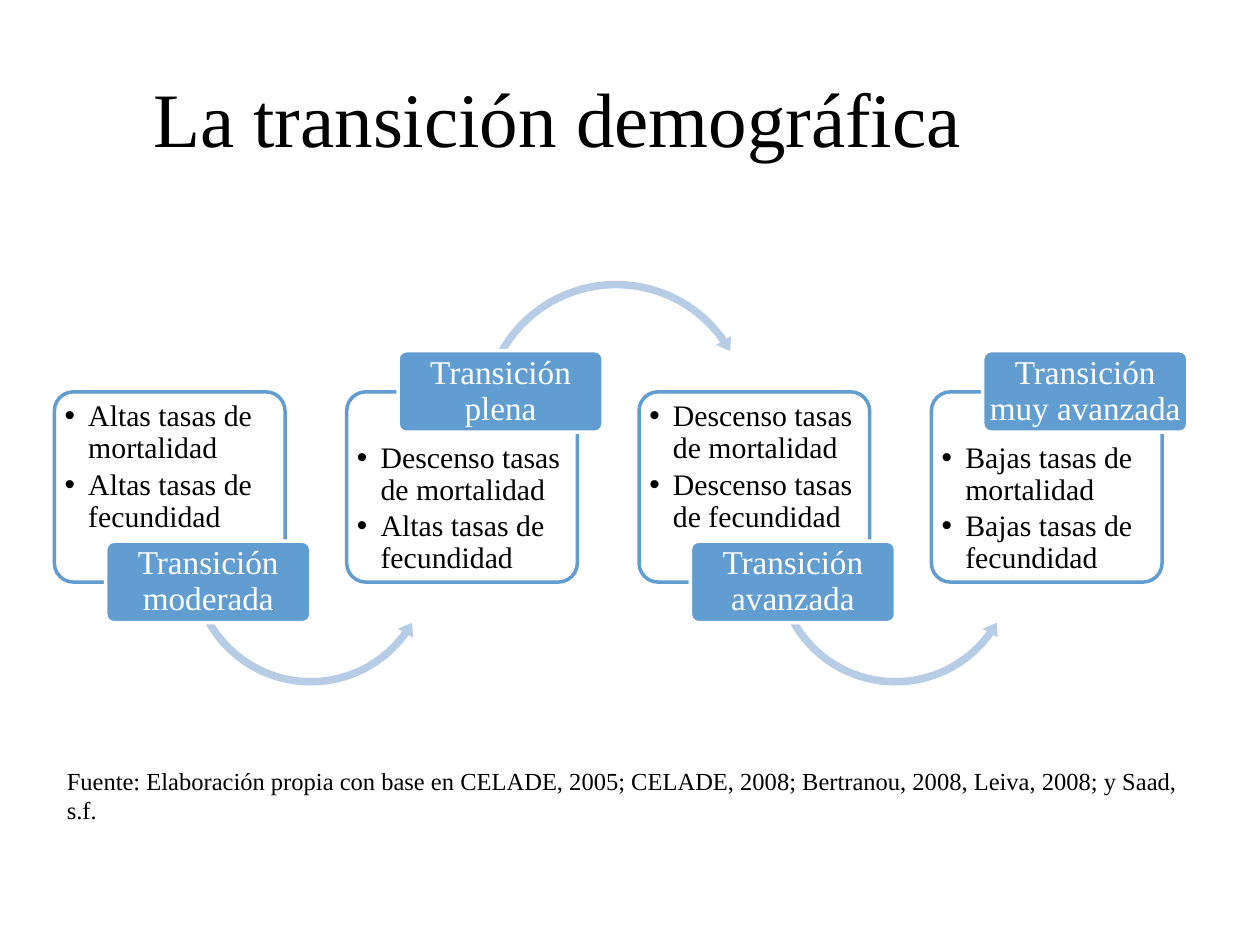
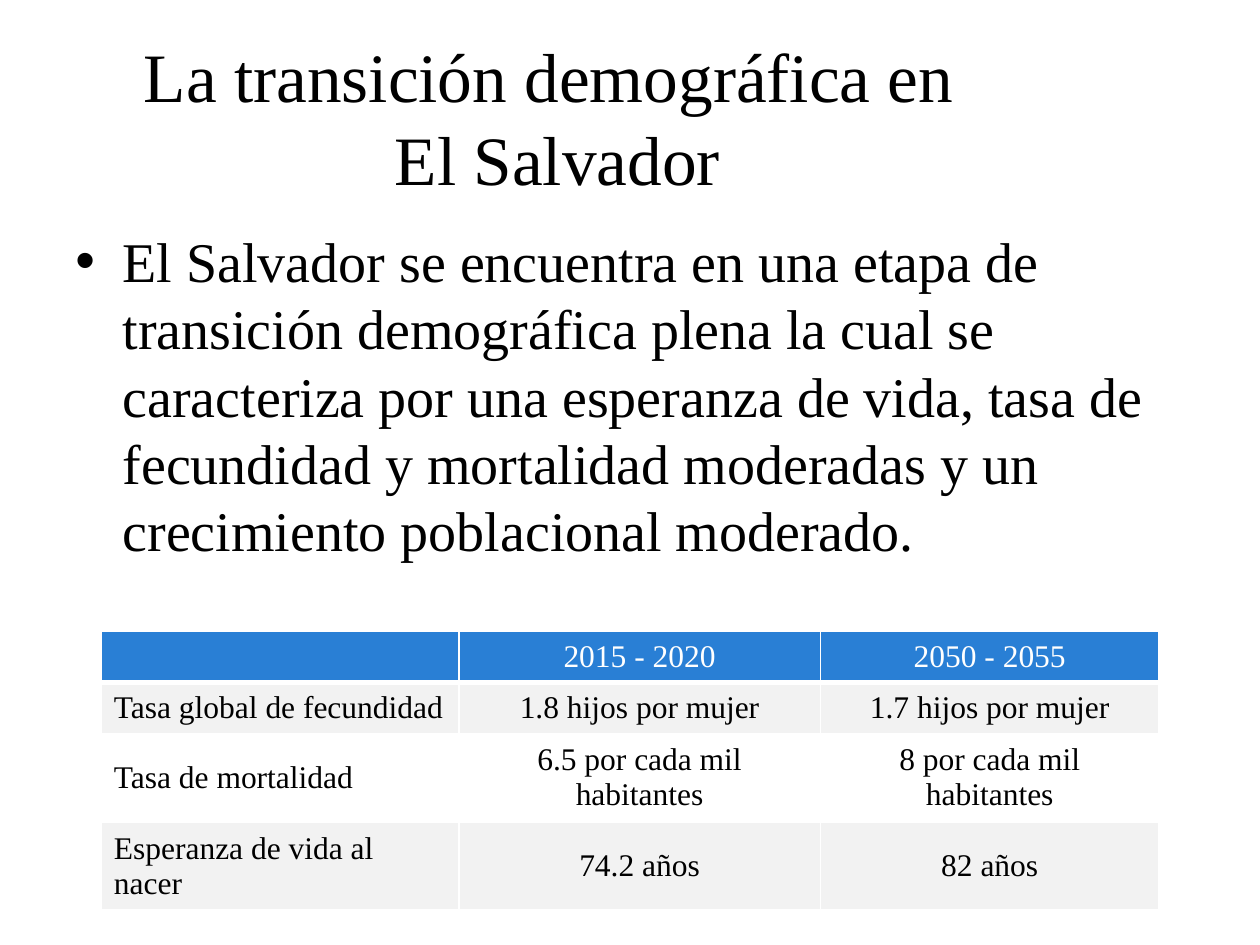
import pptx
import pptx.dml.color
import pptx.enum.shapes
import pptx.enum.text
import pptx.util
from lxml import etree
from pptx.oxml.ns import qn

Pt = pptx.util.Pt
SHAPE = pptx.enum.shapes.MSO_SHAPE
ALIGN = pptx.enum.text.PP_ALIGN
ANCHOR = pptx.enum.text.MSO_ANCHOR

FONT = "Times New Roman"
BLACK, WHITE = "000000", "FFFFFF"
BLUE, PALE_BLUE = "629DD1", "B7CCE5"
HEADER_BLUE, BAND_GREY = "297FD5", "F2F2F2"
TITLE_BOX = (36, 21.6, 565.2, 90)


def rgb(colour):
    return pptx.dml.color.RGBColor.from_string(colour)


def write(frame, texts, size, colour=BLACK, align=ALIGN.LEFT, indent=0,
          line_spacing=None, gap=0):
    """Fill a text frame, one paragraph per text; an indent also adds bullets."""
    frame.word_wrap = True
    for index, text in enumerate(texts):
        para = frame.paragraphs[0] if index == 0 else frame.add_paragraph()
        para.text = text
        if indent:
            properties = para._p.get_or_add_pPr()
            properties.set("marL", str(Pt(indent)))
            properties.set("indent", str(-Pt(indent)))
            etree.SubElement(properties, qn("a:buFont")).set("typeface", "Arial")
            etree.SubElement(properties, qn("a:buChar")).set("char", "•")
        para.alignment = align
        if line_spacing:
            para.line_spacing = line_spacing
        if index:
            para.space_before = Pt(gap)
        para.font.name = FONT
        para.font.size = Pt(size)
        para.font.color.rgb = rgb(colour)


deck = pptx.Presentation()
deck.slide_width, deck.slide_height = Pt(720), Pt(540)

# Titles: one slide each
pages = []
for title, size in [("La transición demográfica", 44),
                    ("La transición demográfica en \vEl Salvador", 39.6)]:
    page = deck.slides.add_slide(deck.slide_layouts[6])
    box = page.shapes.add_textbox(*map(Pt, TITLE_BOX))
    box.text_frame.vertical_anchor = ANCHOR.MIDDLE
    write(box.text_frame, [title], size, align=ALIGN.CENTER)
    pages.append(page)
stages_page, country_page = pages

# Slide 1: four stages, labels alternately below and above their cards
STAGES = [
    ("Transición moderada", ["Altas tasas de mortalidad", "Altas tasas de fecundidad"]),
    ("Transición plena", ["Descenso tasas de mortalidad", "Altas tasas de fecundidad"]),
    ("Transición avanzada", ["Descenso tasas de mortalidad", "Descenso tasas de fecundidad"]),
    ("Transición muy avanzada", ["Bajas tasas de mortalidad", "Bajas tasas de fecundidad"]),
]
STAGE_LEFT, STAGE_STEP = 31.1, 167.05
# kind, left offset, top, diameter, band %, head degrees, end, start, head %
LOWER_ARROW = (SHAPE.LEFT_CIRCULAR_ARROW, 74.8, 251.3, 143.3, 3, 6.06, 35.65, 150.41, 3.5)
UPPER_ARROW = (SHAPE.CIRCULAR_ARROW, 74, 157.7, 159.8, 2.7, 5.38, 325.03, 209.59, 3.1)
DEGREE = 60000 / 100000  # adjustment units per degree

for number, (name, rates) in enumerate(STAGES):
    left = STAGE_LEFT + number * STAGE_STEP
    label_above = number % 2 == 1

    card = stages_page.shapes.add_shape(
        SHAPE.ROUNDED_RECTANGLE, Pt(left), Pt(223.9), Pt(131.8), Pt(108.7))
    parts = [(card, WHITE, BLUE)]

    if number < len(STAGES) - 1:
        kind, offset, top, diameter, band, head, end, start, head_band = (
            UPPER_ARROW if label_above else LOWER_ARROW)
        arrow = stages_page.shapes.add_shape(
            kind, Pt(left + offset), Pt(top), Pt(diameter), Pt(diameter))
        settings = (band / 100, head * DEGREE, end * DEGREE, start * DEGREE, head_band / 100)
        for position, value in enumerate(settings):
            arrow.adjustments[position] = value
        parts.append((arrow, PALE_BLUE, None))

    label = stages_page.shapes.add_shape(
        SHAPE.ROUNDED_RECTANGLE, Pt(left + 29.3), Pt(200.4 if label_above else 309.3),
        Pt(117.2), Pt(46.6))
    parts.append((label, BLUE, WHITE))

    for shape, fill, line in parts:
        shape.shadow.inherit = False
        shape.fill.solid()
        shape.fill.fore_color.rgb = rgb(fill)
        if line:
            shape.adjustments[0] = 0.1
            shape.line.color.rgb = rgb(line)
            shape.line.width = Pt(2)
        else:
            shape.line.fill.background()

    frame = card.text_frame
    frame.vertical_anchor = ANCHOR.TOP
    frame.margin_left = frame.margin_bottom = Pt(2.7)
    frame.margin_right = Pt(1)
    frame.margin_top = Pt(25.7 if label_above else 2)
    write(frame, rates, 17, indent=13.5, line_spacing=0.9, gap=2.5)

    frame = label.text_frame
    frame.vertical_anchor = ANCHOR.MIDDLE
    frame.margin_left = frame.margin_right = Pt(2)
    frame.margin_top = frame.margin_bottom = Pt(2)
    write(frame, [name], 19, WHITE, ALIGN.CENTER, line_spacing=0.9)

source = stages_page.shapes.add_textbox(Pt(31.1), Pt(434.2), Pt(657.4), Pt(24.5))
write(source.text_frame, [
    "Fuente: Elaboración propia con base en CELADE, 2005; CELADE, 2008; "
    "Bertranou, 2008, Leiva, 2008; y Saad, s.f."], 14)

# Slide 2: statement and indicator table
statement = country_page.shapes.add_textbox(Pt(36), Pt(126), Pt(648), Pt(382.3))
write(statement.text_frame, [
    "El Salvador se encuentra en una etapa de transición demográfica plena la cual "
    "se caracteriza por una esperanza de vida, tasa de fecundidad y mortalidad "
    "moderadas y un crecimiento poblacional moderado."], 32, indent=27)

INDICATORS = [
    ("", "2015 - 2020", "2050 - 2055"),
    ("Tasa global de fecundidad", "1.8 hijos por mujer", "1.7 hijos por mujer"),
    ("Tasa de mortalidad", "6.5 por cada mil habitantes", "8 por cada mil habitantes"),
    ("Esperanza de vida al nacer", "74.2 años", "82 años"),
]
table = country_page.shapes.add_table(
    len(INDICATORS), 3, Pt(57.9), Pt(360.8), Pt(604.5), Pt(116.8)).table
for column, width in zip(table.columns, (204.3, 206.6, 193.6)):
    column.width = Pt(width)

for row, values in enumerate(INDICATORS):
    header = row == 0
    fill = HEADER_BLUE if header else BAND_GREY if row % 2 else WHITE
    for column, value in enumerate(values):
        cell = table.cell(row, column)
        cell.vertical_anchor = ANCHOR.MIDDLE
        write(cell.text_frame, [value], 18, WHITE if header else BLACK,
              ALIGN.CENTER if column else ALIGN.LEFT)
        properties = cell._tc.get_or_add_tcPr()
        for side in ("lnL", "lnR", "lnT", "lnB"):
            thick = (header and side == "lnB") or (row == 1 and side == "lnT")
            border = etree.SubElement(properties, qn("a:" + side), w=str(Pt(3 if thick else 1)))
            paint = etree.SubElement(border, qn("a:solidFill"))
            etree.SubElement(paint, qn("a:srgbClr"), val=WHITE)
        cell.fill.solid()
        cell.fill.fore_color.rgb = rgb(fill)

deck.save("out.pptx")
